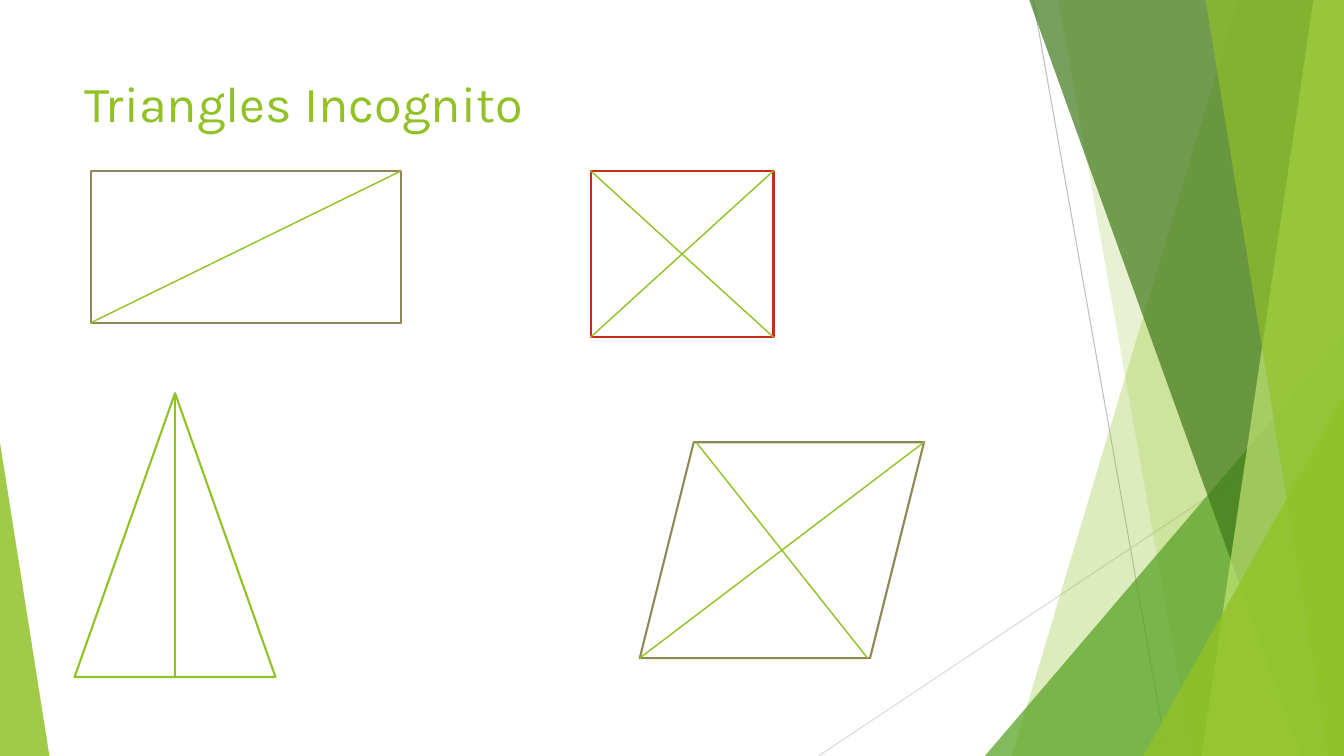
from lxml.etree import SubElement
from pptx import Presentation
from pptx.dml.color import RGBColor
from pptx.enum.shapes import MSO_CONNECTOR, MSO_SHAPE
from pptx.enum.text import MSO_ANCHOR
from pptx.oxml.ns import qn
from pptx.util import Inches, Pt

WHITE = RGBColor(0xFF, 0xFF, 0xFF)
LIME = RGBColor(0x90, 0xC2, 0x26)
PALE_LIME = RGBColor(0xC0, 0xE4, 0x74)
GREEN = RGBColor(0x54, 0xA0, 0x21)
FOREST = RGBColor(0x3F, 0x78, 0x19)
OLIVE = RGBColor(0x91, 0x86, 0x55)
RED = RGBColor(0xC4, 0x2F, 0x1A)
GRAY = RGBColor(0xBF, 0xBF, 0xBF)
LIGHT_GRAY = RGBColor(0xD9, 0xD9, 0xD9)


class Sketch:
    """Draws on one slide; all lengths are percentages of its width and height."""

    font = "Karla"
    outline_width = Pt(1.5)

    def __init__(self, deck):
        self.width, self.height = deck.slide_width, deck.slide_height
        self.page = deck.slides.add_slide(deck.slide_layouts[6])

    def point(self, x, y):
        return round(self.width * x / 100), round(self.height * y / 100)

    def title(self, text, left, top, width, height):
        box = self.page.shapes.add_textbox(*self.point(left, top), *self.point(width, height))
        frame = box.text_frame
        frame.word_wrap = True
        frame.vertical_anchor = MSO_ANCHOR.TOP
        paragraph = frame.paragraphs[0]
        paragraph.text = text
        paragraph.font.name = self.font
        paragraph.font.size = Pt(36)
        paragraph.font.color.rgb = LIME

    def line(self, start, end, color=LIME, width=1):
        connector = self.page.shapes.add_connector(
            MSO_CONNECTOR.STRAIGHT, *self.point(*start), *self.point(*end))
        connector.line.color.rgb = color
        connector.line.width = Pt(width)
        SubElement(connector._element.spPr, qn("a:effectLst"))

    def tint(self, shape, color, opacity):
        shape.shadow.inherit = False
        shape.fill.solid()
        shape.fill.fore_color.rgb = color
        shape.line.fill.background()
        tone = shape._element.spPr.find(".//" + qn("a:srgbClr"))
        SubElement(tone, qn("a:alpha"), val=str(opacity * 1000))

    def band(self, top_left, bottom_left, color, opacity):
        """A full-height facet that reaches the right edge."""
        builder = self.page.shapes.build_freeform(*self.point(top_left, 0))
        corners = [(100, 0), (100, 100), (bottom_left, 100)]
        builder.add_line_segments([self.point(*corner) for corner in corners], close=True)
        self.tint(builder.convert_to_shape(), color, opacity)

    def wedge(self, left, right, top, apex, color, opacity):
        """A triangle standing on the bottom edge; apex 0 is left, 1 is right."""
        shape = self.page.shapes.add_shape(
            MSO_SHAPE.ISOSCELES_TRIANGLE,
            *self.point(left, top), *self.point(right - left, 100 - top))
        shape.adjustments[0] = apex
        self.tint(shape, color, opacity)

    def figure(self, kind, left, top, right, bottom, color):
        shape = self.page.shapes.add_shape(
            kind, *self.point(left, top), *self.point(right - left, bottom - top))
        shape.shadow.inherit = False
        shape.fill.solid()
        shape.fill.fore_color.rgb = WHITE
        shape.line.color.rgb = color
        shape.line.width = self.outline_width


def main():
    deck = Presentation()
    deck.slide_width, deck.slide_height = Inches(13.33), Inches(7.5)
    sketch = Sketch(deck)

    # Background facets
    sketch.line((76.88, 0), (86.85, 100), GRAY, 0.75)
    sketch.line((100, 53.73), (60.9, 100), LIGHT_GRAY, 0.75)
    sketch.band(92.1, 75.3, LIME, 30)
    sketch.band(78.75, 88.73, LIME, 20)
    sketch.wedge(73.28, 100, 44.4, 1, GREEN, 72)
    sketch.band(76.58, 96.83, FOREST, 70)
    sketch.band(97.73, 89.4, PALE_LIME, 70)
    sketch.band(89.7, 98.85, LIME, 65)
    sketch.wedge(85.05, 100, 52.4, 1, LIME, 80)
    sketch.wedge(0, 3.68, 58.53, 0, LIME, 85)

    sketch.title("Triangles Incognito", 5.55, 8.93, 70.5, 19.2)

    # Rectangle with one diagonal
    left, top, right, bottom = 6.75, 22.6, 29.85, 42.7
    sketch.figure(MSO_SHAPE.RECTANGLE, left, top, right, bottom, OLIVE)
    sketch.line((left, bottom), (right, top))

    # Square with both diagonals
    left, top, right, bottom = 43.95, 22.6, 57.55, 44.6
    sketch.figure(MSO_SHAPE.RECTANGLE, left, top, right, bottom, RED)
    sketch.line((left, top), (right, bottom))
    sketch.line((left, bottom), (right, top))

    # Triangle with its altitude
    left, top, right, bottom = 5.55, 52, 20.5, 89.55
    middle = (left + right) / 2
    sketch.figure(MSO_SHAPE.ISOSCELES_TRIANGLE, left, top, right, bottom, LIME)
    sketch.line((middle, top), (middle, bottom))

    # Parallelogram with both diagonals
    left, top, right, bottom = 47.6, 58.5, 68.75, 87.05
    slant = 4.2
    sketch.figure(MSO_SHAPE.PARALLELOGRAM, left, top, right, bottom, OLIVE)
    sketch.line((left, bottom), (right, top))
    sketch.line((left + slant, top), (right - slant, bottom))

    deck.save("out.pptx")


if __name__ == "__main__":
    main()
